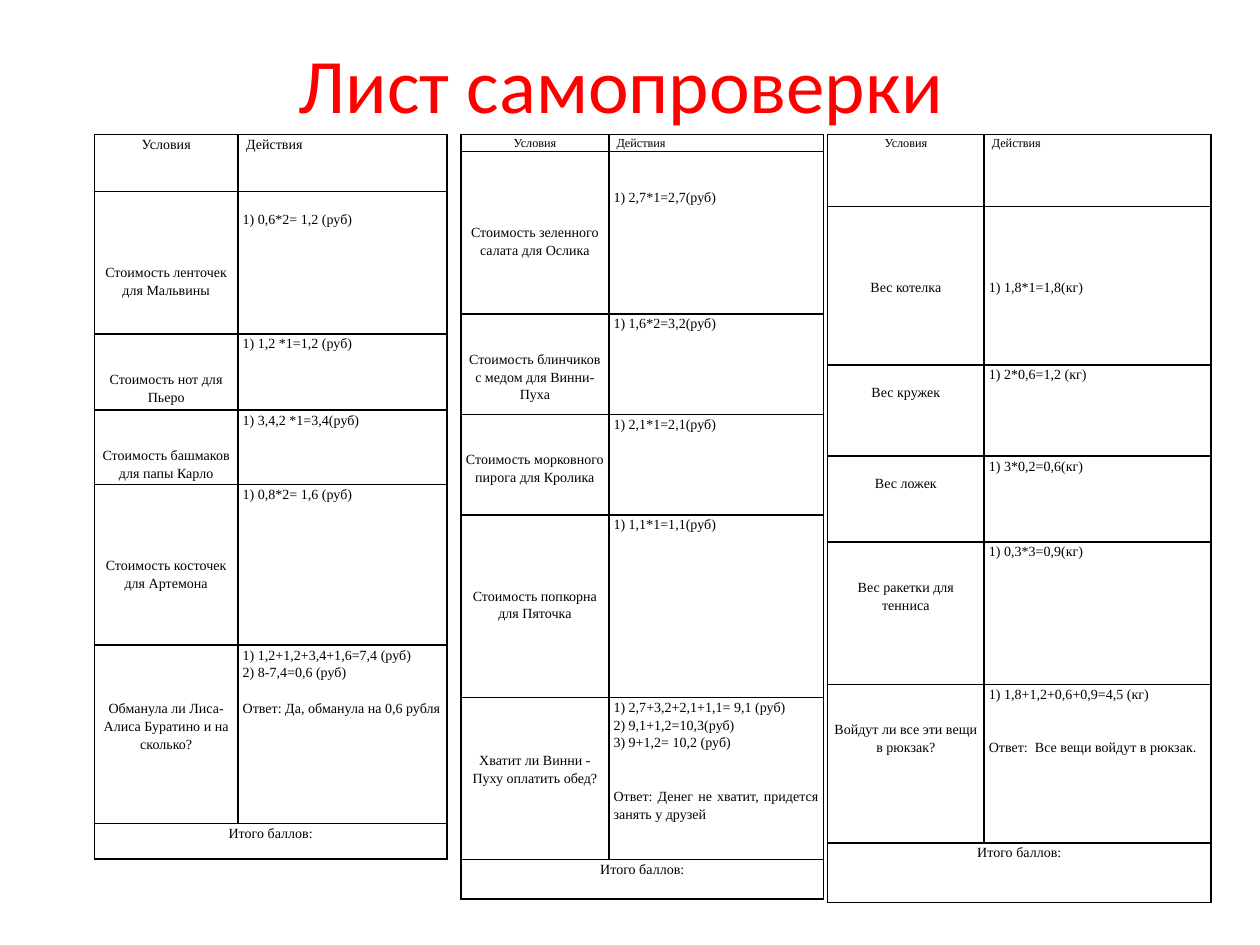
from lxml import etree
from pptx import Presentation
from pptx.dml.color import RGBColor
from pptx.enum.text import MSO_ANCHOR, PP_ALIGN
from pptx.oxml.ns import qn
from pptx.util import Pt

CENTER, JUSTIFY = PP_ALIGN.CENTER, PP_ALIGN.JUSTIFY
COLORS = {"title": "FF0000", "text": "000000", "border": "000000"}
LINE_PITCH = 10.17  # height of one 8 pt line at 1.15 spacing
TABLE_TOP = 77
CELL_FORMAT = {"margin_left": Pt(2.7), "margin_right": Pt(2.7), "margin_bottom": Pt(0),
               "vertical_anchor": MSO_ANCHOR.TOP}

# Each row: (lines above the condition, condition, [(lines above, action), ...])
TABLES = [
    {"left": 54, "columns": [82, 119.5], "header_size": 8,
     "heights": [32.4, 81.4, 43.6, 41, 92, 101.8, 20.4],
     "rows": [
         (4, "Стоимость ленточек для Мальвины", [(1, "1) 0,6*2= 1,2 (руб)")]),
         (2, "Стоимость нот для Пьеро", [(0, "1) 1,2 *1=1,2 (руб)")]),
         (2, "Стоимость башмаков для папы Карло", [(0, "1) 3,4,2 *1=3,4(руб)")]),
         (4, "Стоимость косточек для Артемона", [(0, "1) 0,8*2= 1,6 (руб)")]),
         (3, "Обманула ли Лиса- Алиса Буратино и на сколько?",
          [(0, "1) 1,2+1,2+3,4+1,6=7,4 (руб)"), (0, "2) 8-7,4=0,6 (руб)"),
           (1, "Ответ: Да, обманула на 0,6 рубля")]),
     ]},
    {"left": 263.5, "columns": [84.4, 122.7], "header_size": 7,
     "heights": [9.6, 92.7, 57.5, 57.5, 104.2, 92.7, 22.5],
     "rows": [
         (4, "Стоимость зеленного салата для Ослика", [(2, "1) 2,7*1=2,7(руб)")]),
         (2, "Стоимость блинчиков с медом для Винни-Пуха", [(0, "1) 1,6*2=3,2(руб)")]),
         (2, "Стоимость морковного пирога для Кролика", [(0, "1) 2,1*1=2,1(руб)")]),
         (4, "Стоимость попкорна для Пяточка", [(0, "1) 1,1*1=1,1(руб)")]),
         (3, "Хватит ли Винни - Пуху оплатить обед?",
          [(0, "1) 2,7+3,2+2,1+1,1= 9,1 (руб)"), (0, "2) 9,1+1,2=10,3(руб)"),
           (0, "3) 9+1,2= 10,2 (руб)"),
           (2, "Ответ: Денег не хватит, придется занять у друзей")]),
     ]},
    {"left": 473, "columns": [89.4, 129.6], "header_size": 7,
     "heights": [41, 90.6, 52.1, 49.1, 81.4, 90.6, 34],
     "rows": [
         (4, "Вес котелка", [(4, "1) 1,8*1=1,8(кг)")]),
         (1, "Вес кружек", [(0, "1) 2*0,6=1,2 (кг)")]),
         (1, "Вес ложек", [(0, "1) 3*0,2=0,6(кг)")]),
         (2, "Вес ракетки для тенниса", [(0, "1) 0,3*3=0,9(кг)")]),
         (2, "Войдут ли все эти вещи в рюкзак?",
          [(0, "1) 1,8+1,2+0,6+0,9=4,5 (кг)"),
           (2, "Ответ:  Все вещи войдут в рюкзак.")]),
     ]},
]


def write_paragraph(paragraph, text, alignment, font_name, size, color):
    paragraph.alignment = alignment
    run = paragraph.add_run()
    run.text = text
    font_format = {"name": font_name, "size": Pt(size)}
    for name, value in font_format.items():
        setattr(run.font, name, value)
    run.font.color.rgb = RGBColor.from_string(COLORS[color])


def fill_cell(cell, entries, alignment, size=8):
    for name, value in CELL_FORMAT.items():
        setattr(cell, name, value)
    # The gap above the first paragraph is the cell's top margin
    cell.margin_top = Pt(entries[0][0] * LINE_PITCH)
    for index, (gap, text) in enumerate(entries):
        frame = cell.text_frame
        paragraph = frame.add_paragraph() if index else frame.paragraphs[0]
        paragraph.line_spacing = 1.15
        if index and gap:
            paragraph.space_before = Pt(gap * LINE_PITCH)
        write_paragraph(paragraph, text, alignment, "Times New Roman", size, "text")


presentation = Presentation()
presentation.slide_width, presentation.slide_height = Pt(720), Pt(540)
slide = presentation.slides.add_slide(presentation.slide_layouts[6])

# Title
title = slide.shapes.add_textbox(Pt(31), Pt(2), Pt(648), Pt(90))
title.text_frame.word_wrap = True
title.text_frame.vertical_anchor = MSO_ANCHOR.MIDDLE
write_paragraph(title.text_frame.paragraphs[0], "Лист самопроверки", CENTER, "Calibri", 44, "title")

# Three self-check tables
for data in TABLES:
    columns, heights = data["columns"], data["heights"]
    table = slide.shapes.add_table(len(heights), len(columns), Pt(data["left"]), Pt(TABLE_TOP),
                                   Pt(sum(columns)), Pt(sum(heights))).table
    table.first_row = table.horz_banding = False
    for column, width in zip(table.columns, columns):
        column.width = Pt(width)
    for row, height in zip(table.rows, heights):
        row.height = Pt(height)

    # Header, conditions with actions, total
    fill_cell(table.cell(0, 0), [(0, "Условия")], CENTER, data["header_size"])
    fill_cell(table.cell(0, 1), [(0, " Действия")], JUSTIFY, data["header_size"])
    for index, (gap, condition, actions) in enumerate(data["rows"], start=1):
        fill_cell(table.cell(index, 0), [(gap, condition)], CENTER)
        fill_cell(table.cell(index, 1), actions, JUSTIFY)
    total = table.cell(len(heights) - 1, 0)
    total.merge(table.cell(len(heights) - 1, 1))
    fill_cell(total, [(0, "Итого баллов:")], CENTER)

    # Black borders, no fill
    for cell in table.iter_cells():
        properties = cell._tc.get_or_add_tcPr()
        for side in ("a:lnL", "a:lnR", "a:lnT", "a:lnB"):
            border = etree.SubElement(properties, qn(side), w=str(Pt(1)))
            solid = etree.SubElement(border, qn("a:solidFill"))
            etree.SubElement(solid, qn("a:srgbClr"), val=COLORS["border"])
        cell.fill.background()

presentation.save("out.pptx")
